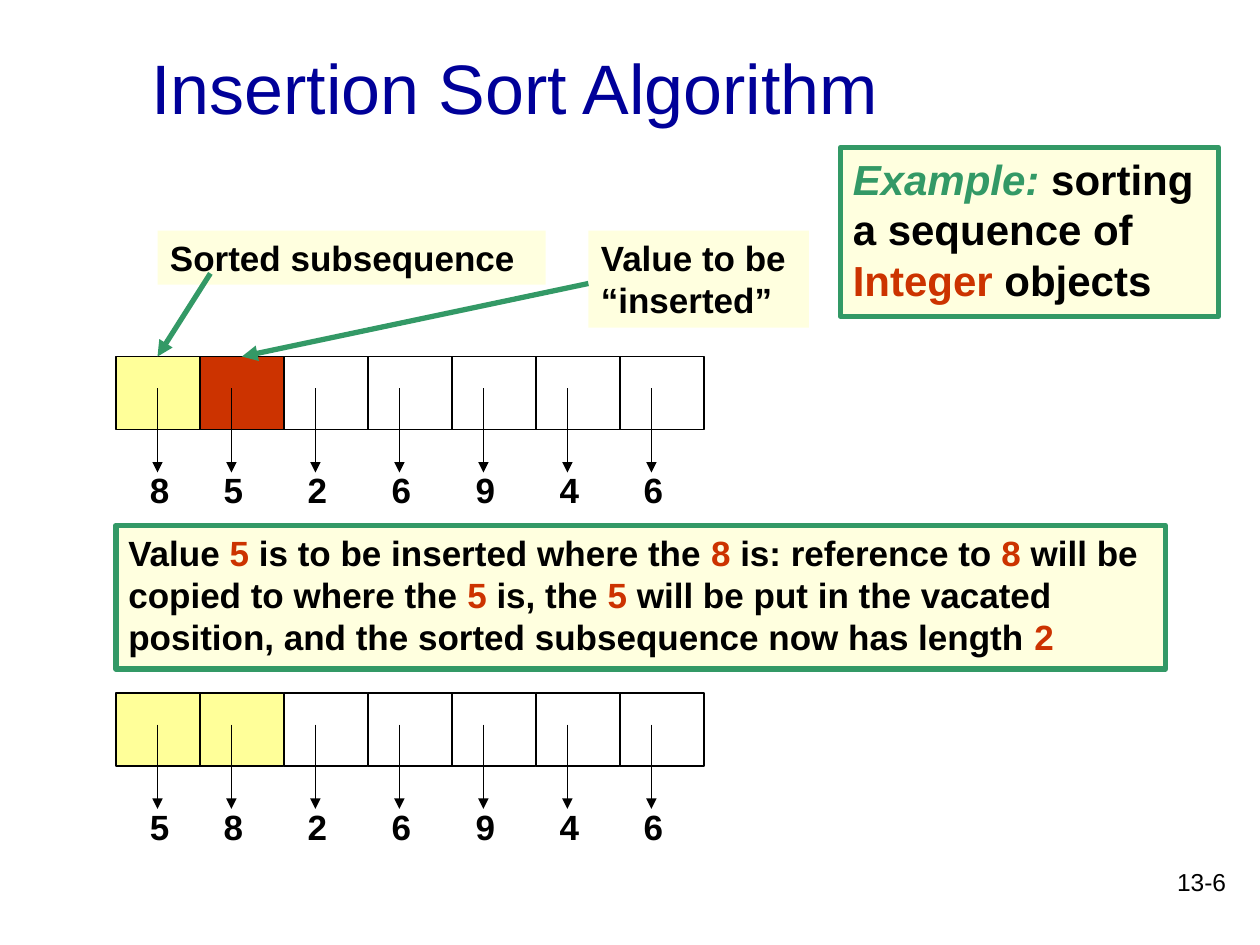
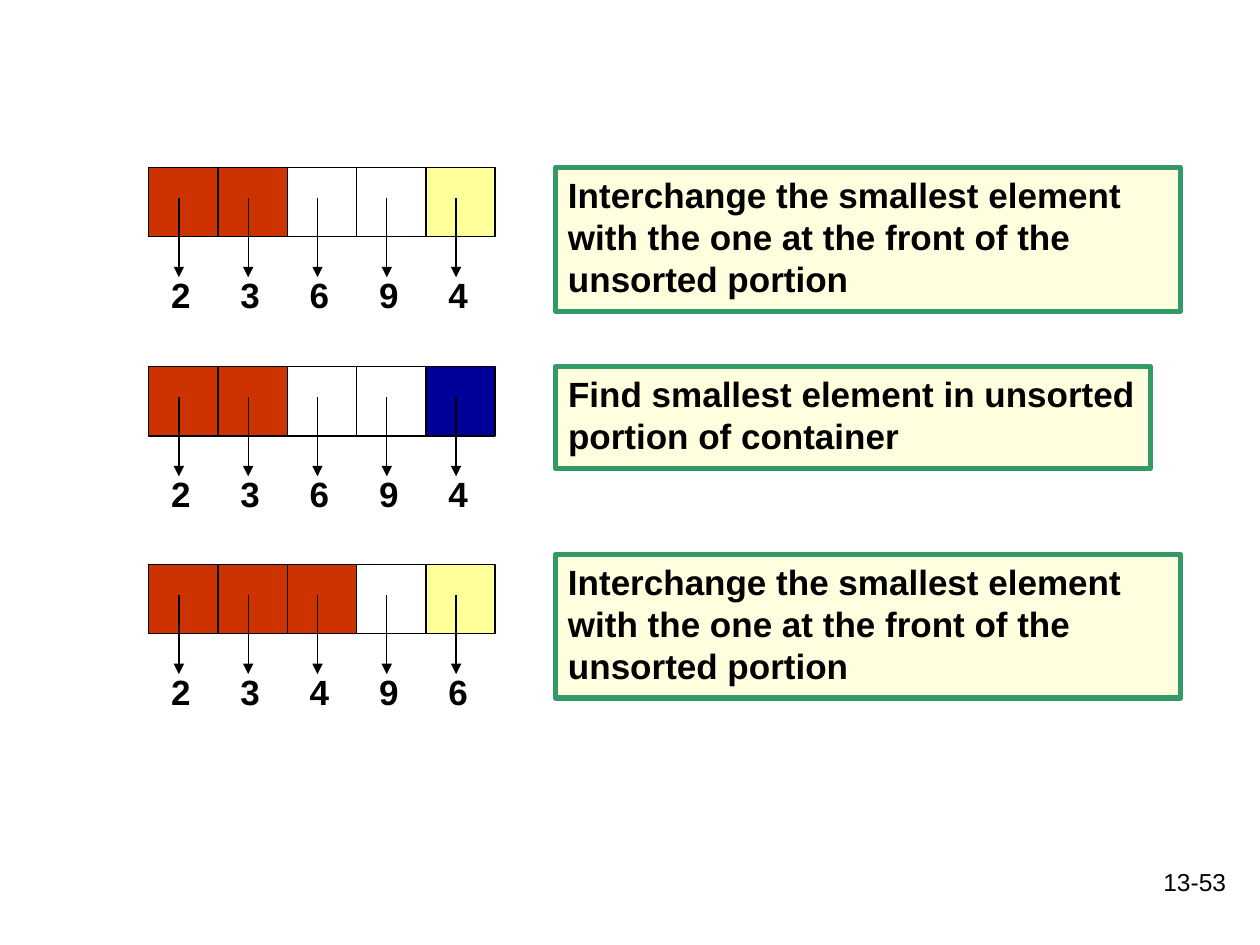
"""Build two slides that show sorting steps on rows of references."""
from dataclasses import dataclass
from lxml import etree
from pptx import Presentation
from pptx import util as u
from pptx.dml import color
from pptx.enum import shapes, text
from pptx.oxml import ns


@dataclass(frozen=True)
class Theme:
    font: str = "Arial"
    black: str = "000000"
    navy: str = "000099"
    red: str = "CC3300"
    green: str = "339966"
    yellow: str = "FFFF99"
    cream: str = "FFFFDF"
    title: int = 40
    lead: int = 24
    body: int = 20
    foot: int = 14
    thin: float = 0.75
    thick: float = 3


@dataclass(frozen=True)
class Grid:
    left: float
    step: float
    high: float
    stem: float
    start: float
    tip: float
    label: float
    shift: float = 0


THEME = Theme()
WIDE = Grid(0.92, 2 / 3, 0.58, 0.25, 0.25, 0.92, 0.42, 0.08)
SMALL = Grid(1.18, 0.55, 0.55, 0.24, 0.24, 0.87, 0.31)
FILLS = {"r": THEME.red, "y": THEME.yellow, "b": THEME.navy, ".": None}
SWAP = ("Interchange the smallest element with the one "
        "at the front of the unsorted portion")


def rgb(tone):
    return color.RGBColor.from_string(tone)


class Deck:
    def __init__(self, theme):
        self.theme = theme
        self.show = Presentation()
        self.show.slide_width = u.Inches(10)
        self.show.slide_height = u.Inches(7.5)
        self.slide = None

    def page(self, number):
        self.slide = self.show.slides.add_slide(self.show.slide_layouts[6])
        self.label(number, (7.75, 6.83, 2.08, 0.5), self.theme.foot,
                   align=text.PP_ALIGN.RIGHT)

    def style(self, run, size, tone, bold=False, slant=False):
        font = run.font
        font.name, font.size = self.theme.font, u.Pt(size)
        font.bold, font.italic = bold, slant
        font.color.rgb = rgb(tone)

    def label(self, words, box, size, tone=None, bold=False,
              align=text.PP_ALIGN.LEFT, anchor=text.MSO_ANCHOR.TOP):
        item = self.slide.shapes.add_textbox(*map(u.Inches, box))
        frame = item.text_frame
        frame.word_wrap = True
        frame.vertical_anchor = anchor
        frame.text = words
        para = frame.paragraphs[0]
        para.alignment = align
        self.style(para.runs[0], size, tone or self.theme.black, bold)

    def title(self, words):
        self.label(words, (0.15, 0.06, 7.87, 1.25), self.theme.title,
                   self.theme.navy, align=text.PP_ALIGN.CENTER,
                   anchor=text.MSO_ANCHOR.MIDDLE)

    def rect(self, box, fill=None, edge=None, width=None):
        item = self.slide.shapes.add_shape(
            shapes.MSO_SHAPE.RECTANGLE, *map(u.Inches, box))
        item.shadow.inherit = False
        if fill:
            item.fill.solid()
            item.fill.fore_color.rgb = rgb(fill)
        else:
            item.fill.background()
        if edge:
            item.line.color.rgb = rgb(edge)
            item.line.width = u.Pt(width)
        else:
            item.line.fill.background()
        return item

    def note(self, words, box, size=None, edge=True):
        """Add a cream box; words between asterisks turn red."""
        theme = self.theme
        item = self.rect(box, theme.cream, theme.green if edge else None,
                         theme.thick)
        frame = item.text_frame
        frame.word_wrap = True
        frame.vertical_anchor = text.MSO_ANCHOR.TOP
        para = frame.paragraphs[0]
        para.alignment = text.PP_ALIGN.LEFT
        for index, part in enumerate(words.split("*")):
            if part:
                run = para.add_run()
                run.text = part
                tone = theme.red if index % 2 else theme.black
                self.style(run, size or theme.body, tone, bold=True)
        return para

    def arrow(self, start, end, tone, width):
        line = self.slide.shapes.add_connector(
            shapes.MSO_CONNECTOR.STRAIGHT, *map(u.Inches, start + end))
        line.line.color.rgb = rgb(tone)
        line.line.width = u.Pt(width)
        props = line._element.spPr
        etree.SubElement(props.find(ns.qn("a:ln")), ns.qn("a:tailEnd"),
                         type="triangle")
        etree.SubElement(props, ns.qn("a:effectLst"))

    def row(self, grid, top, digits, fills):
        theme = self.theme
        for index, (digit, fill) in enumerate(zip(digits, fills)):
            left = grid.left + index * grid.step
            self.rect((left, top, grid.step, grid.high), FILLS[fill],
                      theme.black, theme.thin)
            stem = left + grid.stem + (0 if index else grid.shift)
            tip = top + grid.tip
            self.label(digit, (stem - 0.16, tip - 0.08, grid.label, 0.43),
                       theme.body, bold=True)
            self.arrow((stem, top + grid.start), (stem, tip),
                       theme.black, theme.thin)


def insertion(deck):
    theme = deck.theme
    deck.page("13-6")
    deck.title("Insertion Sort Algorithm")
    deck.row(WIDE, 2.83, "8526946", "yr.....")
    deck.note("Sorted subsequence", (1.25, 1.83, 3.08, 0.43), edge=False)
    deck.note("Value to be “inserted”", (4.67, 1.83, 1.75, 0.77), edge=False)
    for start, end in (((1.67, 2.17), (1.25, 2.83)),
                       ((4.67, 2.25), (1.92, 2.83))):
        deck.arrow(start, end, theme.green, theme.thick)
    deck.row(WIDE, 5.5, "5826946", "yy.....")
    deck.note("Value *5* is to be inserted where the *8* is: reference to *8* "
              "will be copied to where the *5* is, the *5* will be put in the "
              "vacated position, and the sorted subsequence now has length *2*",
              (0.92, 4.17, 8.33, 1.14))
    para = deck.note("Example: **sorting a sequence of *Integer* objects",
                     (6.67, 1.17, 3, 1.34), theme.lead)
    deck.style(para.runs[0], theme.lead, theme.green, bold=True, slant=True)


def selection(deck):
    deck.page("13-53")
    steps = (
        (1.33, "23694", "rr..y", SWAP, (4.41, 1.33, 4.96, 1.14)),
        (2.91, "23694", "rr..b",
         "Find smallest element in unsorted portion of container",
         (4.41, 2.91, 4.72, 0.81)),
        (4.48, "23496", "rrr.y", SWAP, (4.41, 4.4, 4.96, 1.14)),
    )
    for top, digits, fills, words, box in steps:
        deck.row(SMALL, top, digits, fills)
        deck.note(words, box)


def main():
    deck = Deck(THEME)
    insertion(deck)
    selection(deck)
    deck.show.save("out.pptx")


if __name__ == "__main__":
    main()
